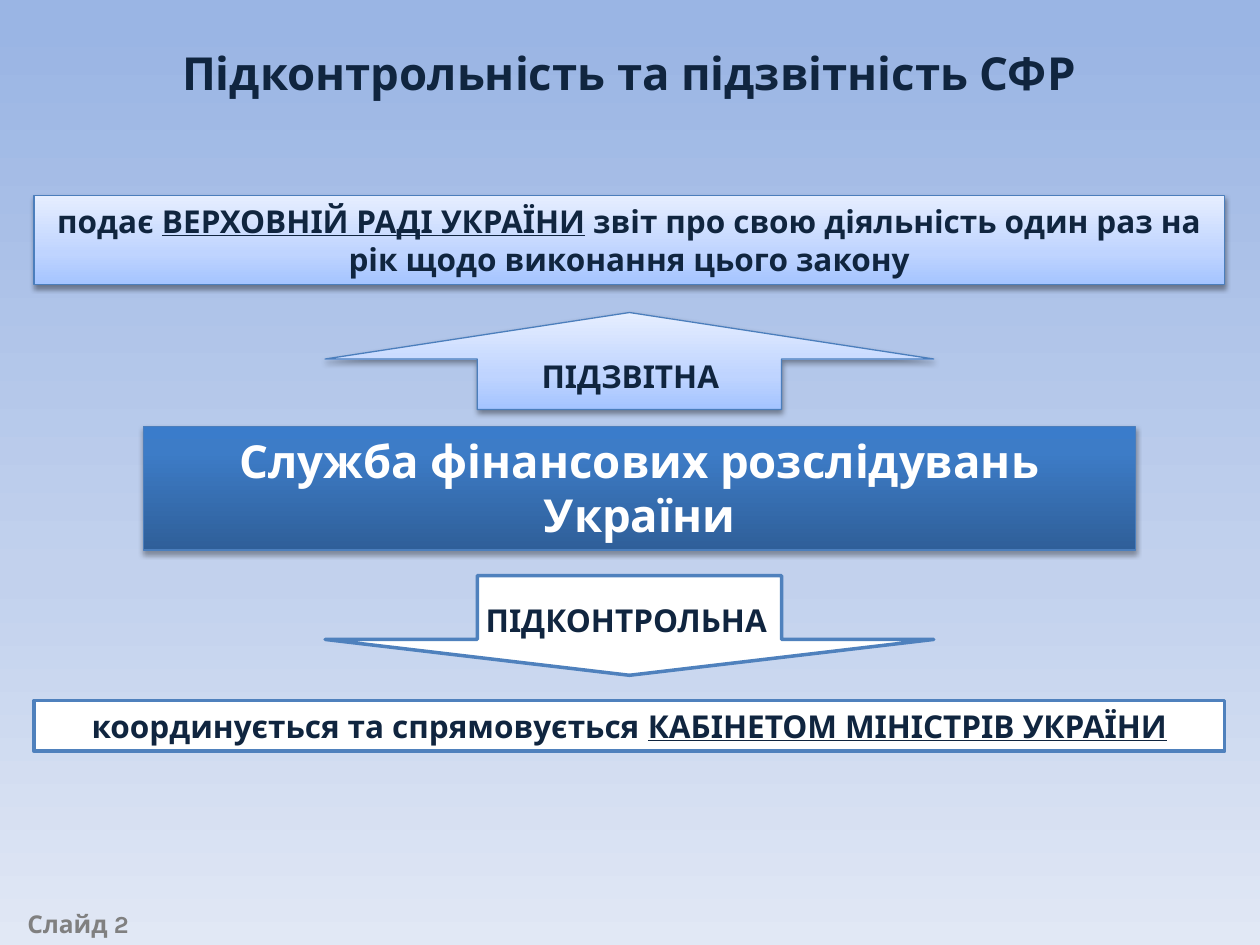
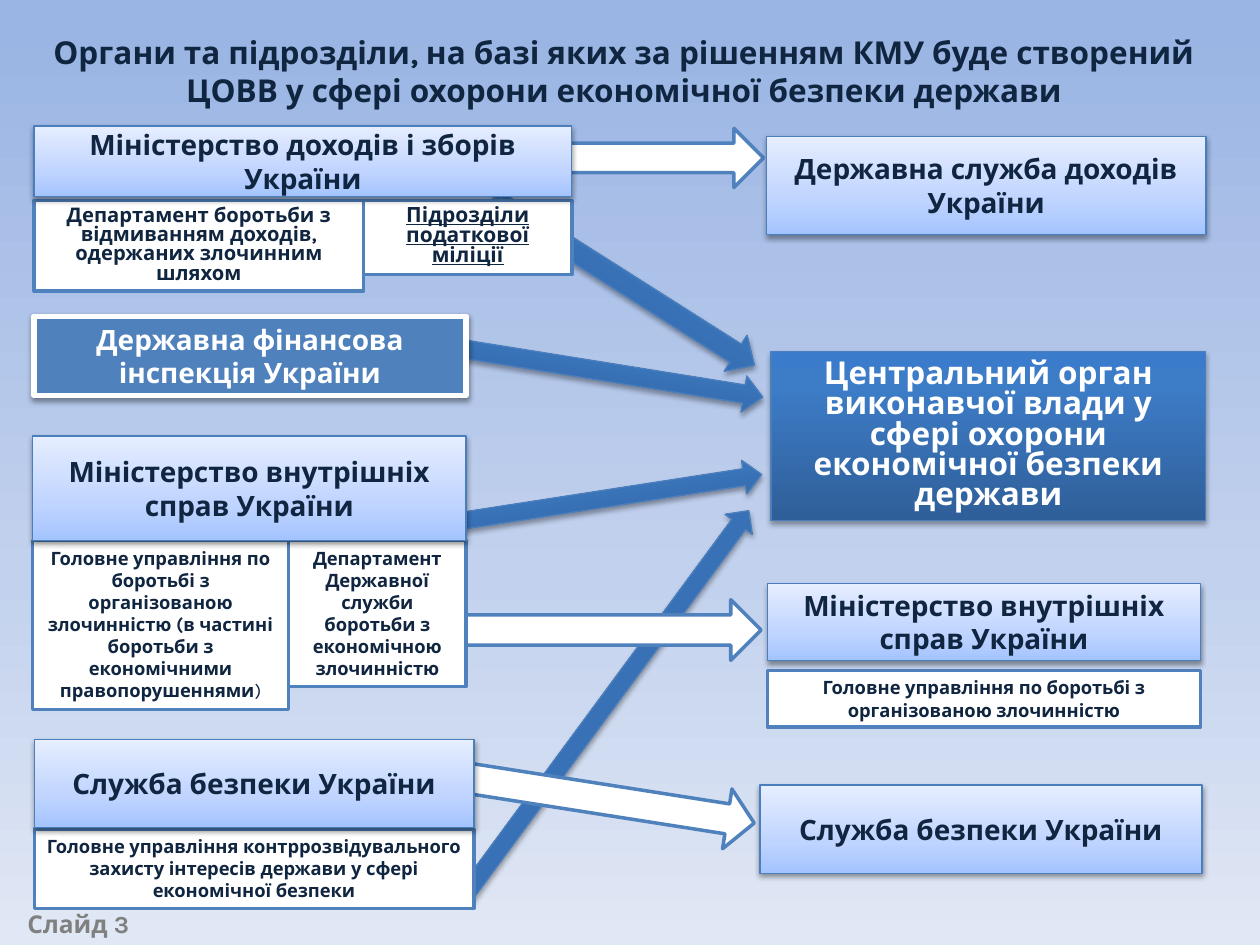
from dataclasses import dataclass

from lxml.etree import SubElement
from pptx import Presentation
from pptx.dml.color import RGBColor
from pptx.enum.shapes import MSO_SHAPE
from pptx.enum.text import MSO_ANCHOR, MSO_AUTO_SIZE, PP_ALIGN
from pptx.oxml.ns import qn
from pptx.util import Pt


@dataclass(frozen=True)
class Theme:
    font: str = "Karla"
    navy: str = "10253F"
    white: str = "FFFFFF"
    gray: str = "808080"
    accent: str = "4F81BD"
    edge: str = "4B7EBC"
    sky: tuple = ((2, "9AB5E4"), (61, "C2D1ED"), (100, "E1E8F5"))
    pale: tuple = ((0, "A4C4FF"), (35, "BFD4FF"), (100, "E6EEFF"))
    deep: tuple = ((0, "2F5F99"), (80, "3D7CC7"), (100, "3A7CCB"))
    headline: float = 26
    body: float = 18
    head: float = 16
    footer: float = 14
    unit: float = 10.5


THEME = Theme()

# Shadow: opacity in percent, blur and distance in points
PALE_SHADOW = (38, 3.1, 1.6)
DEEP_SHADOW = (35, 3.1, 1.8)
STYLES = {
    "pale": {"fill": THEME.pale, "line": (THEME.edge, 0.75), "shadow": PALE_SHADOW, "text": THEME.navy},
    "deep": {"fill": THEME.deep, "line": (THEME.edge, 0.75), "shadow": DEEP_SHADOW, "text": THEME.white},
    "solid": {"fill": THEME.accent, "line": (THEME.white, 3), "shadow": PALE_SHADOW, "text": THEME.white},
    "plain": {"fill": THEME.white, "line": (THEME.accent, 2), "shadow": None, "text": THEME.navy},
}

UNDERLINED = {"underline": True}
MIDDLE = {"anchor": MSO_ANCHOR.MIDDLE}
GROW = {"auto_size": MSO_AUTO_SIZE.SHAPE_TO_FIT_TEXT}

# Slide 2: boxes and arrows as (left, top, width, height)
ACCOUNTABILITY_TITLE = "Підконтрольність та підзвітність СФР"
ACCOUNTABILITY_BOXES = [
    ((19.4, 111.6, 680.4, 51), "pale", THEME.body, MIDDLE, [
        ("подає ", {}),
        ("ВЕРХОВНІЙ РАДІ УКРАЇНИ", UNDERLINED),
        (" звіт про свою діяльність один раз на рік щодо виконання цього закону", {}),
    ]),
    ((19.4, 400.3, 680.4, 29), "plain", THEME.body, MIDDLE, [
        ("координується та спрямовується ", {}),
        ("КАБІНЕТОМ МІНІСТРІВ УКРАЇНИ", UNDERLINED),
    ]),
    ((82, 243.8, 567, 70.5), "deep", THEME.headline, {},
     "Служба фінансових розслідувань України"),
]
ACCOUNTABILITY_ARROWS = [
    (MSO_SHAPE.UP_ARROW, (185.8, 178.6, 347.8, 55.4), "pale", 0, (0.5, 0.48)),
    (MSO_SHAPE.DOWN_ARROW, (185.8, 329, 347.8, 56.9), "plain", 0, (0.5, 0.36)),
]
ARROW_LABELS = [
    ((275, 200.2, 170.6, 29), "ПІДЗВІТНА"),
    ((247, 339.8, 221.8, 29), "ПІДКОНТРОЛЬНА"),
]

# Slide 3
BODIES_TITLE = ("Органи та підрозділи, на базі яких за рішенням КМУ буде створений "
                "ЦОВВ у сфері охорони економічної безпеки держави")
STRIPED = MSO_SHAPE.STRIPED_RIGHT_ARROW
RIGHT = MSO_SHAPE.RIGHT_ARROW
TRANSFER_ARROWS = [
    (STRIPED, (249.1, 201.6, 187.9, 20.9), "deep", 9.1, (0.5, 0.52)),
    (RIGHT, (276.5, 73.4, 159.8, 33.8), "plain", 0, (0.5, 0.5)),
    (RIGHT, (211, 391.7, 272.2, 19.4), "deep", 306.4, (0.5, 0.5)),
    (RIGHT, (255.6, 342.7, 179.3, 34.6), "plain", 0, (0.5, 0.5)),
    (RIGHT, (262.1, 439.9, 169.9, 34.6), "plain", 8.9, (0.5, 0.45)),
    (STRIPED, (248.4, 275.8, 187.9, 19.4), "deep", 351.2, (0.5, 0.52)),
    (STRIPED, (267.8, 149, 177.1, 24.5), "deep", 32.4, (0.5, 0.52)),
]
# Box, style, name, gap below, units as (width, height, size, line spacing, text)
ORGANISATIONS = [
    ((19.4, 72, 307.4, 40.3), "pale", "Міністерство доходів і зборів України", 2.2, [
        (188.4, 51.8, 11.5, 0.8,
         "Департамент боротьби з відмиванням доходів, одержаних злочинним шляхом"),
        (119, 42.5, 12, 0.8, [("Підрозділи податкової міліції", UNDERLINED)]),
    ]),
    ((19.4, 180.7, 247, 45.4), "solid", "Державна фінансова інспекція України", 0, []),
    ((18.7, 249.1, 247.7, 59.8), "pale", "Міністерство внутрішніх справ України", 0, [
        (146.2, 96.5, THEME.unit, 1, [
            ("Головне управління по боротьбі з організованою злочинністю "
             "(в частині боротьби з економічними правопорушеннями", {}),
            (")", {"bold": False}),
        ]),
        (101.5, 83.5, THEME.unit, 1,
         "Департамент Державної служби боротьби з економічною злочинністю"),
    ]),
    ((19.6, 422.6, 251.3, 50.4), "pale", "Служба безпеки України", 0.7, [
        (251.3, 45.4, THEME.unit, 1,
         "Головне управління контррозвідувального захисту інтересів держави "
         "у сфері економічної безпеки"),
    ]),
    ((437.8, 77.8, 251.3, 56.2), "pale", "Державна служба доходів України", 0, []),
    ((438.5, 333.4, 247.7, 43.9), "pale", "Міністерство внутрішніх справ України", 5.8, [
        (247.7, 32.4, THEME.unit, 1,
         "Головне управління по боротьбі з організованою злочинністю"),
    ]),
    ((434.2, 448.6, 252.7, 50.4), "pale", "Служба безпеки України", 0, []),
]
CENTRAL_BODY = ((440.6, 200.9, 248.4, 96.5),
                "Центральний орган виконавчої влади у сфері охорони економічної безпеки держави")


def color(value):
    return RGBColor.from_string(value)


def set_gradient(fill, element, stops, angle):
    fill.gradient()
    fill.gradient_angle = angle
    stop_list = element.find(".//" + qn("a:gsLst"))
    for stop in list(stop_list):
        stop_list.remove(stop)
    for position, value in stops:
        stop = SubElement(stop_list, qn("a:gs"), pos=str(position * 1000))
        SubElement(stop, qn("a:srgbClr"), val=value)


def add_shadow(shape, opacity, blur, distance):
    effects = shape._element.spPr.find(qn("a:effectLst"))
    shadow = SubElement(effects, qn("a:outerShdw"), blurRad=str(Pt(blur)),
                        dist=str(Pt(distance)), dir="5400000", rotWithShape="0")
    shade = SubElement(shadow, qn("a:srgbClr"), val="000000")
    SubElement(shade, qn("a:alpha"), val=str(opacity * 1000))


def write(shape, text, size, text_color=THEME.navy, frame=None, alignment=PP_ALIGN.CENTER,
          spacing=None):
    """Fill a shape with one paragraph: a string, or (text, format) runs."""
    text_frame = shape.text_frame
    frame_format = {"word_wrap": True, "vertical_anchor": MSO_ANCHOR.TOP,
                    "auto_size": MSO_AUTO_SIZE.NONE}
    for name, value in (frame or {}).items():
        frame_format["vertical_anchor" if name == "anchor" else name] = value
    for name, value in frame_format.items():
        setattr(text_frame, name, value)
    paragraph = text_frame.paragraphs[0]
    paragraph.alignment = alignment
    if spacing:
        paragraph.line_spacing = spacing
    for part, changes in [(text, {})] if isinstance(text, str) else text:
        run = paragraph.add_run()
        run.text = part
        font_format = {"name": THEME.font, "size": Pt(size), "bold": True, **changes}
        for name, value in font_format.items():
            setattr(run.font, name, value)
        run.font.color.rgb = color(text_color)


def add_styled_shape(slide, kind, box, style_name):
    style = STYLES[style_name]
    shape = slide.shapes.add_shape(kind, *map(Pt, box))
    shape.shadow.inherit = False
    if isinstance(style["fill"], str):
        shape.fill.solid()
        shape.fill.fore_color.rgb = color(style["fill"])
    else:
        set_gradient(shape.fill, shape._element.spPr, style["fill"], 90)
    line_color, line_width = style["line"]
    shape.line.color.rgb = color(line_color)
    shape.line.width = Pt(line_width)
    if style["shadow"]:
        add_shadow(shape, *style["shadow"])
    return shape


def add_box(slide, box, style_name, text, size, frame=None, spacing=None):
    shape = add_styled_shape(slide, MSO_SHAPE.RECTANGLE, box, style_name)
    write(shape, text, size, STYLES[style_name]["text"], frame, spacing=spacing)


def add_arrow(slide, kind, box, style_name, rotation, adjustments):
    arrow = add_styled_shape(slide, kind, box, style_name)
    arrow.rotation = rotation
    for index, value in enumerate(adjustments):
        arrow.adjustments[index] = value


def add_text(slide, box, text, size, **options):
    write(slide.shapes.add_textbox(*map(Pt, box)), text, size, **options)


def add_organisation(slide, box, style_name, name, gap, units):
    """Draw a body with its units side by side below it."""
    left, top, width, height = box
    unit_top = top + height + gap
    for unit_width, unit_height, size, spacing, text in units:
        add_box(slide, (left, unit_top, unit_width, unit_height), "plain", text, size,
                GROW, spacing)
        left += unit_width
    add_box(slide, box, style_name, name, THEME.head, MIDDLE)


def add_slide(presentation, number, title, title_box, title_size):
    slide = presentation.slides.add_slide(presentation.slide_layouts[5])
    placeholder = slide.shapes.title
    for name, value in zip(("left", "top", "width", "height"), title_box):
        setattr(placeholder, name, Pt(value))
    write(placeholder, title, title_size, frame=GROW)
    add_text(slide, (8.6, 513.4, 703.4, 28.8), f"Слайд {number}", THEME.footer,
             text_color=THEME.gray, frame=MIDDLE, alignment=PP_ALIGN.JUSTIFY)
    return slide


def build_accountability(presentation):
    slide = add_slide(presentation, 2, ACCOUNTABILITY_TITLE, (19.4, 22.3, 680.4, 39),
                      THEME.headline)
    for arrow in ACCOUNTABILITY_ARROWS:
        add_arrow(slide, *arrow)
    for box, style_name, size, frame, text in ACCOUNTABILITY_BOXES:
        add_box(slide, box, style_name, text, size, {**GROW, **frame})
    for box, label in ARROW_LABELS:
        add_text(slide, box, label, THEME.body, frame=GROW)


def build_bodies(presentation):
    slide = add_slide(presentation, 3, BODIES_TITLE, (19.4, 15.1, 674.6, 51), THEME.body)
    for arrow in TRANSFER_ARROWS:
        add_arrow(slide, *arrow)
    for organisation in ORGANISATIONS:
        add_organisation(slide, *organisation)
    box, name = CENTRAL_BODY
    add_box(slide, box, "deep", name, THEME.body, MIDDLE, 0.8)


def main():
    presentation = Presentation()
    presentation.slide_width, presentation.slide_height = Pt(720), Pt(540)
    master = presentation.slide_master
    set_gradient(master.background.fill, master._element, THEME.sky, 270)
    build_accountability(presentation)
    build_bodies(presentation)
    presentation.save("out.pptx")


if __name__ == "__main__":
    main()
